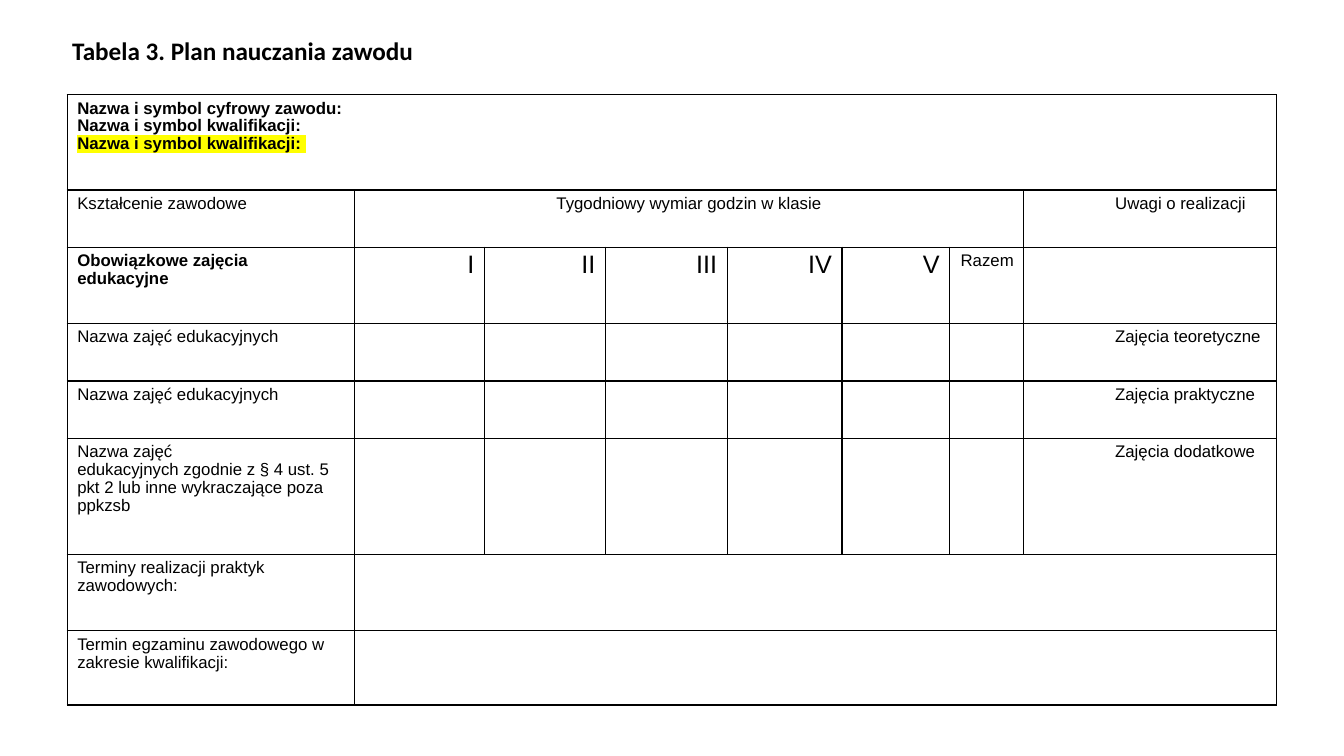
from lxml import etree
from pptx import Presentation
from pptx.dml.color import RGBColor
from pptx.enum.text import MSO_ANCHOR, PP_ALIGN
from pptx.oxml.ns import qn
from pptx.util import Pt

LEFT, CENTER, RIGHT = PP_ALIGN.LEFT, PP_ALIGN.CENTER, PP_ALIGN.RIGHT
BLACK, YELLOW = "000000", "FFFF00"


def set_font(font, name, size, bold):
    font.name, font.size, font.bold = name, Pt(size), bold
    font.color.rgb = RGBColor.from_string(BLACK)


def add_solid_fill(parent, tag, color):
    element = etree.SubElement(parent, qn(tag))
    holder = etree.SubElement(element, qn("a:solidFill")) if tag != "a:highlight" else element
    etree.SubElement(holder, qn("a:srgbClr"), val=color)
    return element


presentation = Presentation()
presentation.slide_width, presentation.slide_height = Pt(960), Pt(540)
slide = presentation.slides.add_slide(presentation.slide_layouts[5])

# Title
title = slide.shapes.title
title.left, title.top, title.width, title.height = Pt(48), Pt(21.6), Pt(864), Pt(90)
frame = title.text_frame
frame.margin_left = frame.margin_right = frame.margin_top = frame.margin_bottom = Pt(3.6)
frame.vertical_anchor = MSO_ANCHOR.TOP
frame.text = "Tabela 3. Plan nauczania zawodu"
frame.paragraphs[0].alignment = LEFT
set_font(frame.paragraphs[0].font, "Calibri", 18, True)

# Table grid
column_widths = [205, 93, 86.5, 87, 82, 77, 53, 180.5]
row_heights = [68, 41, 54.5, 41, 41, 83, 54.5, 53]
table = slide.shapes.add_table(len(row_heights), len(column_widths), Pt(48), Pt(67.7),
                               Pt(sum(column_widths)), Pt(sum(row_heights))).table
table.first_row = table.horz_banding = False
for column, width in zip(table.columns, column_widths):
    column.width = Pt(width)
for row, height in zip(table.rows, row_heights):
    row.height = Pt(height)

# Merged cells: row, first column, last column
for row, first, last in [(0, 0, 7), (1, 1, 6), (6, 1, 7), (7, 1, 7)]:
    table.cell(row, first).merge(table.cell(row, last))

# Borders and fill
for cell in table.iter_cells():
    properties = cell._tc.get_or_add_tcPr()
    for side in "LRTB":
        add_solid_fill(properties, f"a:ln{side}", BLACK).set("w", str(Pt(1)))
    cell.fill.background()

# Texts by row and column
texts = {
    (0, 0): "Nazwa i symbol cyfrowy zawodu:\nNazwa i symbol kwalifikacji:\nNazwa i symbol kwalifikacji: ",
    (1, 0): "Kształcenie zawodowe",
    (1, 1): "Tygodniowy wymiar godzin w klasie",
    (1, 7): "Uwagi o realizacji",
    (2, 0): "Obowiązkowe zajęcia edukacyjne",
    (2, 6): "Razem",
    (3, 0): "Nazwa zajęć edukacyjnych",
    (3, 7): "Zajęcia teoretyczne",
    (4, 0): "Nazwa zajęć edukacyjnych",
    (4, 7): "Zajęcia praktyczne",
    (5, 0): "Nazwa zajęć\nedukacyjnych zgodnie z § 4 ust. 5 pkt 2 lub inne wykraczające poza ppkzsb",
    (5, 7): "Zajęcia dodatkowe",
    (6, 0): "Terminy realizacji praktyk zawodowych:",
    (7, 0): "Termin egzaminu zawodowego w zakresie kwalifikacji:",
}
class_numerals = ["I", "II", "III", "IV", "V"]
texts.update({(2, column): numeral for column, numeral in enumerate(class_numerals, 1)})

for (row, column), text in texts.items():
    cell = table.cell(row, column)
    cell.text = text
    is_numeral = text in class_numerals
    for paragraph in cell.text_frame.paragraphs:
        paragraph.line_spacing = 0.95
        paragraph.alignment = CENTER if (row, column) == (1, 1) else RIGHT if row == 2 and column else LEFT
        if column == 7:
            paragraph._p.get_or_add_pPr().set("marL", str(Pt(58)))
        set_font(paragraph.font, "Arial", 18 if is_numeral else 12, (row, column) in [(0, 0), (2, 0)])

# Highlight on the last heading line
heading_run = table.cell(0, 0).text_frame.paragraphs[-1].runs[0]
add_solid_fill(heading_run._r.get_or_add_rPr(), "a:highlight", YELLOW)

presentation.save("out.pptx")
